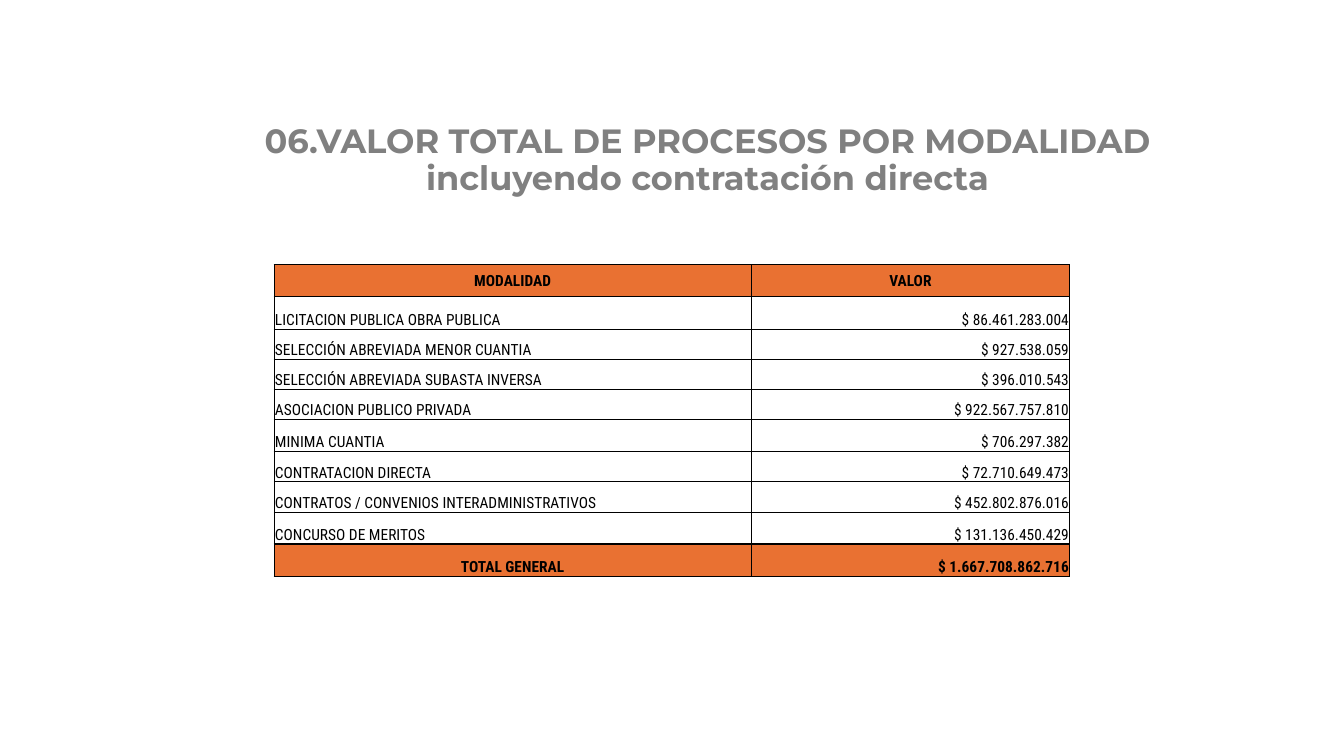
from pptx import Presentation
from pptx.dml.color import RGBColor
from pptx.enum import text
from pptx.oxml import parse_xml
from pptx.oxml.ns import nsdecls
from pptx.util import Cm, Pt

ORANGE, GRAY, BLACK = "E97132", "808080", "000000"
THICK, THIN = 1, 0.5
LEFT, CENTER, RIGHT = text.PP_ALIGN.LEFT, text.PP_ALIGN.CENTER, text.PP_ALIGN.RIGHT

ROWS = [
    ("MODALIDAD", "VALOR"),
    ("LICITACION PUBLICA OBRA PUBLICA", "$ 86.461.283.004"),
    ("SELECCIÓN ABREVIADA MENOR CUANTIA", "$ 927.538.059"),
    ("SELECCIÓN ABREVIADA SUBASTA INVERSA", "$ 396.010.543"),
    ("ASOCIACION PUBLICO PRIVADA", "$ 922.567.757.810"),
    ("MINIMA CUANTIA", "$ 706.297.382"),
    ("CONTRATACION DIRECTA", "$ 72.710.649.473"),
    ("CONTRATOS / CONVENIOS INTERADMINISTRATIVOS", "$ 452.802.876.016"),
    ("CONCURSO DE MERITOS", "$ 131.136.450.429"),
    ("TOTAL GENERAL", "$ 1.667.708.862.716"),
]
HEADER, INTERADMINISTRATIVE, TOTAL = 0, 7, len(ROWS) - 1
TALL_ROWS = {0, 1, 5, 8, 9}
THICK_EDGES = {0, 1, 6, 9, 10}  # horizontal rules, counted from the top


def color(value):
    return RGBColor.from_string(value)


class SlideBuilder:
    title_font = "Montserrat"
    table_font = "Roboto Condensed"

    def __init__(self, presentation):
        self.slide = presentation.slides.add_slide(presentation.slide_layouts[5])

    def style(self, paragraph, name, size, fill, bold, alignment):
        paragraph.alignment = alignment
        font = paragraph.font
        font.name, font.size, font.bold = name, Pt(size), bold
        font.color.rgb = color(fill)

    def title(self, content, left, top, width, height):
        shape = self.slide.shapes.title
        shape.left, shape.top, shape.width, shape.height = map(Cm, (left, top, width, height))
        frame = shape.text_frame
        frame.word_wrap = True
        frame.auto_size = text.MSO_AUTO_SIZE.NONE
        frame.vertical_anchor = text.MSO_ANCHOR.BOTTOM
        paragraph = frame.paragraphs[0]
        paragraph.text = content
        paragraph.line_spacing = 0.9
        self.style(paragraph, self.title_font, 24, GRAY, True, CENTER)

    def borders(self, cell, widths):
        properties = cell._tc.get_or_add_tcPr()
        for side, width in zip("LRTB", widths):
            properties.append(parse_xml(
                f'<a:ln{side} {nsdecls("a")} w="{Pt(width)}"><a:solidFill>'
                f'<a:srgbClr val="{BLACK}"/></a:solidFill></a:ln{side}>'))

    def cell(self, cell, content, strong, alignment, anchor, widths):
        cell.margin_left = cell.margin_right = cell.margin_top = Cm(0.02)
        cell.margin_bottom = 0
        cell.vertical_anchor = anchor
        self.borders(cell, widths)
        if strong:
            cell.fill.solid()
            cell.fill.fore_color.rgb = color(ORANGE)
        else:
            cell.fill.background()
        paragraph = cell.text_frame.paragraphs[0]
        paragraph.text = content
        self.style(paragraph, self.table_font, 11, BLACK, strong, alignment)

    def table(self, rows, left, top, column_widths, row_heights):
        table = self.slide.shapes.add_table(
            len(rows), len(column_widths), Cm(left), Cm(top),
            Cm(sum(column_widths)), Cm(sum(row_heights))).table
        table.first_row = table.horz_banding = False
        for column, width in zip(table.columns, column_widths):
            column.width = Cm(width)
        for r, values in enumerate(rows):
            table.rows[r].height = Cm(row_heights[r])
            strong = r in (HEADER, TOTAL)
            outer = THIN if r == INTERADMINISTRATIVE else THICK
            inner = THICK if strong else THIN
            above, below = (THICK if edge in THICK_EDGES else THIN for edge in (r, r + 1))
            anchor = text.MSO_ANCHOR.MIDDLE if r == HEADER else text.MSO_ANCHOR.BOTTOM
            alignments = (CENTER if strong else LEFT, CENTER if r == HEADER else RIGHT)
            sides = ((outer, inner), (inner, outer))
            for c, content in enumerate(values):
                self.cell(table.cell(r, c), content, strong, alignments[c], anchor,
                          (*sides[c], above, below))


def main():
    presentation = Presentation()
    presentation.slide_width, presentation.slide_height = Cm(33.87), Cm(19.05)
    builder = SlideBuilder(presentation)

    # Heading
    builder.title("06.VALOR TOTAL DE PROCESOS POR MODALIDAD\vincluyendo contratación directa",
                  3.76, 2.84, 28.14, 2.26)

    # Value by type of process
    heights = [0.81 if r in TALL_ROWS else 0.76 for r in range(len(ROWS))]
    builder.table(ROWS, 6.91, 6.67, (12.02, 8.03), heights)

    presentation.save("out.pptx")


if __name__ == "__main__":
    main()
